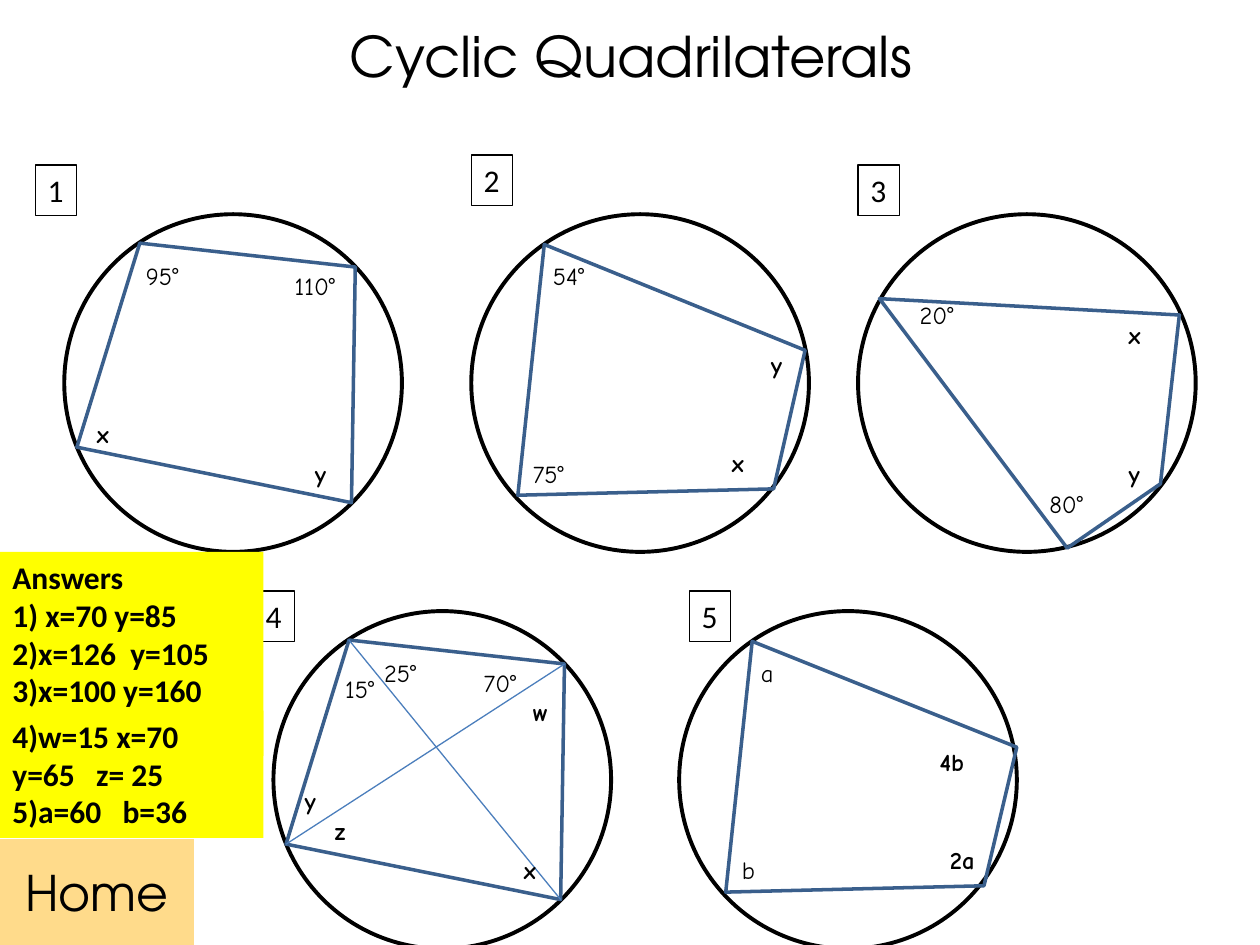
from dataclasses import dataclass
from typing import NamedTuple

from lxml.etree import SubElement
from pptx import Presentation
from pptx.dml.color import RGBColor as Rgb
from pptx.enum.shapes import MSO_CONNECTOR as Link, MSO_SHAPE as Kind
from pptx.enum.text import MSO_ANCHOR as Anchor, PP_ALIGN as Align
from pptx.oxml.ns import qn
from pptx.util import Pt

PX = 9144
SIZE = 268
BODY, HAND, HEAD = "Calibri", "Comic Neue", "TeX Gyre Adventor"
BLACK, EDGE, CHORD = "000000", "3A5F8C", "4B7EBC"
YELLOW, PEACH = "FFFF00", "FFDB8B"


class Point(NamedTuple):
    x: int
    y: int


class Mark(NamedTuple):
    text: str
    x: int
    y: int
    bold: bool = True
    w: int = 39


@dataclass
class Figure:
    """A numbered circle; tag, corners and marks are relative to its top left."""
    num: str
    at: Point
    tag: Point
    corners: list[Point]
    marks: list[Mark]
    chords: bool = False


@dataclass
class Panel:
    box: tuple[int, int, int, int]
    lines: list[str]


def corners(*pairs: tuple[int, int]) -> list[Point]:
    """Turn number pairs into points."""
    return [Point(*pair) for pair in pairs]


def angle(text: str, x: int, y: int) -> Mark:
    """Make a light mark for a given angle."""
    return Mark(text, x, y, False, 79)


KITE = corners((10, 185), (60, 23), (231, 42), (228, 229))

FIGURES = [
    Figure("1", Point(51, 170), Point(-23, -39), KITE,
           [Mark("x", 16, 158), Mark("y", 189, 189),
            angle("95°", 55, 32), angle("110°", 173, 40)]),
    Figure("2", Point(374, 170), Point(0, -47),
           corners((37, 223), (58, 24), (265, 108), (240, 218)),
           [Mark("x", 197, 181), Mark("y", 228, 103),
            angle("54°", 55, 32), angle("75°", 39, 189)]),
    Figure("3", Point(681, 170), Point(0, -39),
           corners((17, 67), (255, 80), (240, 214), (166, 265)),
           [Mark("x", 205, 79), Mark("y", 205, 189),
            angle("20°", 39, 63), angle("80°", 142, 213)]),
    Figure("4", Point(217, 485), Point(-16, -16), KITE,
           [Mark("x", 189, 189), Mark("y", 15, 134),
            Mark("z", 39, 158), Mark("w", 196, 63),
            angle("15°", 47, 45), angle("25°", 78, 32),
            angle("70°", 157, 40)], True),
    Figure("5", Point(539, 485), Point(8, -16),
           corners((37, 223), (58, 24), (268, 108), (242, 218)),
           [Mark("2a", 205, 181, w=63), Mark("4b", 197, 103, w=71),
            angle("a", 55, 32), angle("b", 40, 189)]),
]

PANELS = [
    Panel((0, 438, 209, 162),
          ["Answers", "1) x=70 y=85", "2)x=126  y=105", "3)x=100 y=160"]),
    Panel((0, 564, 209, 101), ["4)w=15 x=70  y=65   z= 25", "5)a=60   b=36"]),
]


def emu(*nums: int) -> list[int]:
    """Scale px to EMU."""
    return [num * PX for num in nums]


def tint(code: str) -> Rgb:
    """Make a colour from a hex string."""
    return Rgb.from_string(code)


def write(frame, lines: list[str], font: str, size: int,
          bold: bool = False, align: Align = Align.LEFT) -> None:
    """Write each line as a paragraph with one run."""
    for i, line in enumerate(lines):
        para = frame.add_paragraph() if i else frame.paragraphs[0]
        para.alignment = align
        run = para.add_run()
        run.text = line
        run.font.name, run.font.size, run.font.bold = font, Pt(size), bold
        run.font.color.rgb = tint(BLACK)


def style(shape, fill: str = "", line: str = "", width: float = 0) -> None:
    """Set fill and line, and drop the shadow."""
    shape.shadow.inherit = False
    if fill:
        shape.fill.solid()
        shape.fill.fore_color.rgb = tint(fill)
    else:
        shape.fill.background()
    if line:
        shape.line.color.rgb = tint(line)
        shape.line.width = Pt(width)
    else:
        shape.line.fill.background()


def block(shapes, box: tuple[int, int, int, int], fill: str = "",
          line: str = "", wrap: bool = True, anchor: Anchor = Anchor.TOP):
    """Add a rectangle and return its text frame."""
    shape = shapes.add_shape(Kind.RECTANGLE, *emu(*box))
    style(shape, fill, line, 0.75)
    frame = shape.text_frame
    frame.word_wrap, frame.vertical_anchor = wrap, anchor
    return frame


def chord(shapes, a: Point, b: Point) -> None:
    """Join two points with a thin line."""
    line = shapes.add_connector(Link.STRAIGHT, *emu(*a, *b))
    line.line.color.rgb = tint(CHORD)
    line.line.width = Pt(0.75)
    SubElement(line._element.spPr, qn("a:effectLst"))


def draw(shapes, fig: Figure) -> None:
    """Draw one circle with its quadrilateral, marks and number."""
    x, y = fig.at
    ring = shapes.add_shape(Kind.OVAL, *emu(x, y, SIZE, SIZE))
    style(ring, line=BLACK, width=2.25)
    pts = [Point(x + p.x, y + p.y) for p in fig.corners]
    pen = shapes.build_freeform(*pts[0], scale=PX)
    pen.add_line_segments(pts[1:], close=True)
    style(pen.convert_to_shape(), line=EDGE, width=2)
    if fig.chords:
        chord(shapes, pts[1], pts[3])
        chord(shapes, pts[0], pts[2])
    for mark in fig.marks:
        box = shapes.add_textbox(*emu(x + mark.x, y + mark.y, mark.w, 34))
        box.text_frame.word_wrap = True
        write(box.text_frame, [mark.text], HAND, 14, mark.bold)
    tag = block(shapes, (x + fig.tag.x, y + fig.tag.y, 33, 40),
                line=BLACK, wrap=False)
    write(tag, [fig.num], BODY, 18)


def main() -> None:
    """Build the slide and save it."""
    deck = Presentation()
    deck.slide_width, deck.slide_height = emu(1000, 750)
    slide = deck.slides.add_slide(deck.slide_layouts[5])
    shapes = slide.shapes
    title = shapes.title
    title.left, title.top, title.width, title.height = emu(51, -19, 900, 125)
    title.text_frame.vertical_anchor = Anchor.MIDDLE
    write(title.text_frame, ["Cyclic Quadrilaterals"], HEAD, 32,
          align=Align.CENTER)
    for fig in FIGURES:
        draw(shapes, fig)
    for panel in PANELS:
        write(block(shapes, panel.box, YELLOW), panel.lines, BODY, 18, True)
    home = block(shapes, (0, 666, 154, 84), PEACH, anchor=Anchor.MIDDLE)
    write(home, ["Home"], HEAD, 28, align=Align.CENTER)
    deck.save("out.pptx")


if __name__ == "__main__":
    main()
